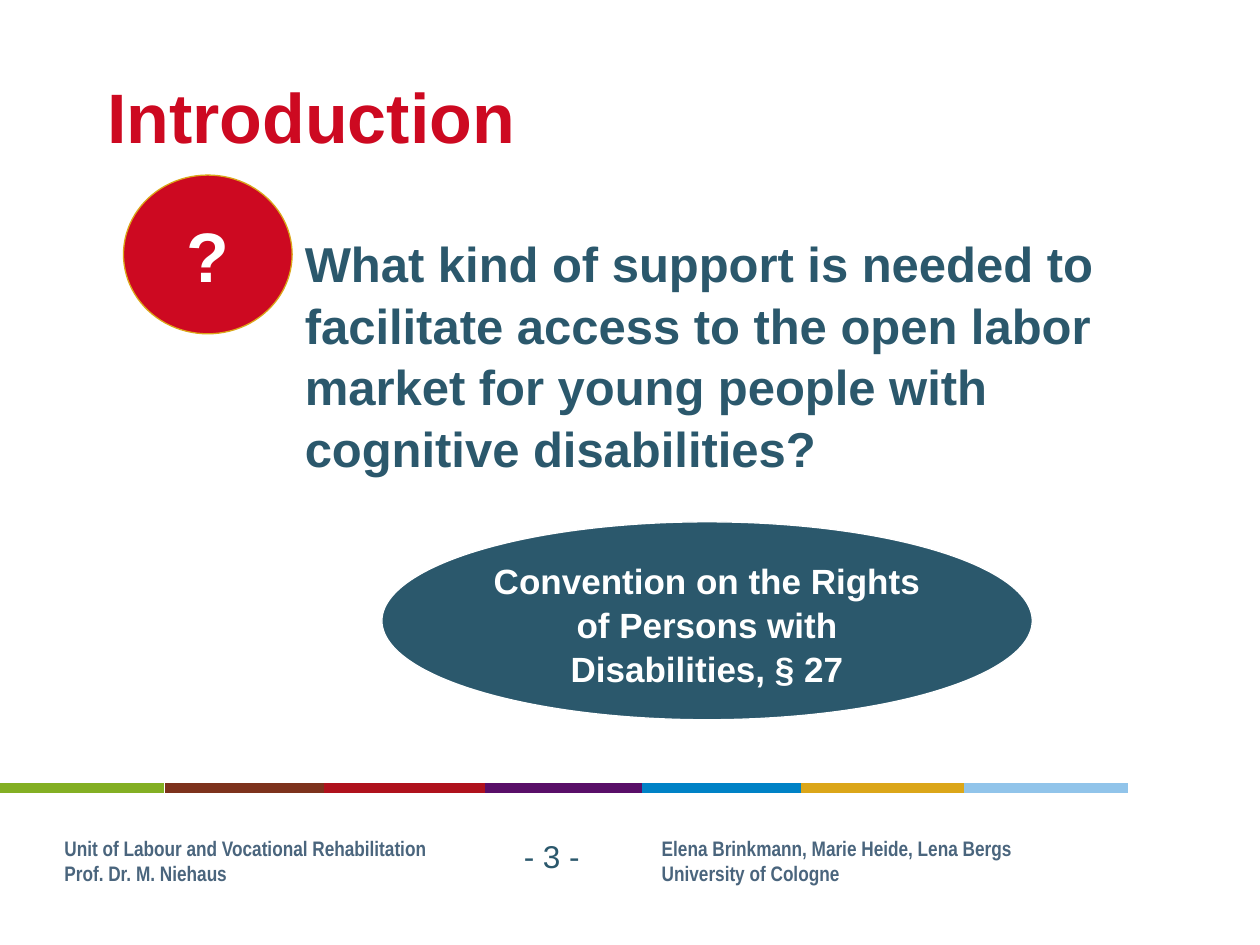
from dataclasses import dataclass, field
from typing import Optional

from lxml import etree
from pptx import Presentation
from pptx import util as u
from pptx.dml.color import RGBColor
from pptx.enum import shapes, text
from pptx.oxml.ns import qn

HUE = {
    "red": "CD0921", "teal": "2B586C", "slate": "4A657D", "white": "FFFFFF",
    "green": "83AF23", "brown": "7D321D", "wine": "AF111D", "plum": "590F68",
    "blue": "0082C6", "gold": "DBA619", "sky": "91C4EA",
}
KIND = shapes.MSO_SHAPE
LEFT, MID = text.PP_ALIGN.LEFT, text.PP_ALIGN.CENTER
TOP, CORE = text.MSO_ANCHOR.TOP, text.MSO_ANCHOR.MIDDLE


@dataclass
class Style:
    size: float
    hue: str
    name: str = "Arial"
    bold: bool = True
    align: int = LEFT
    space: Optional[float] = None
    frame: dict = field(default_factory=dict)


@dataclass
class Block:
    box: tuple
    lines: list
    style: Style
    kind: Optional[int] = None
    fill: str = "white"
    edge: Optional[str] = None


@dataclass
class Band:
    left: float
    hue: str


def tint(key: str) -> RGBColor:
    return RGBColor.from_string(HUE[key])


def place(shape, box: tuple) -> None:
    for key, val in zip(("left", "top", "width", "height"), box):
        setattr(shape, key, u.Cm(val))


def write(shape, lines: list, style: Style) -> None:
    frame = shape.text_frame
    for key, val in {"word_wrap": True, **style.frame}.items():
        setattr(frame, key, val)
    look = {"size": u.Pt(style.size), "name": style.name, "bold": style.bold}
    for num, line in enumerate(lines):
        para = frame.add_paragraph() if num else frame.paragraphs[0]
        para.alignment = style.align
        para.space_before = u.Pt(0)
        if style.space:
            para.line_spacing = style.space
        run = para.add_run()
        run.text = line
        for key, val in look.items():
            setattr(run.font, key, val)
        run.font.color.rgb = tint(style.hue)


def draw_block(slide, block: Block) -> None:
    box = [u.Cm(val) for val in block.box]
    if block.kind is None:
        shape = slide.shapes.add_textbox(*box)
    else:
        shape = slide.shapes.add_shape(block.kind, *box)
        shape.shadow.inherit = False
        shape.fill.solid()
        shape.fill.fore_color.rgb = tint(block.fill)
        if block.edge:
            shape.line.color.rgb = tint(block.edge)
            shape.line.width = u.Pt(0.75)
        else:
            shape.line.fill.background()
    write(shape, block.lines, block.style)


def draw_band(slide, band: Band) -> None:
    line = slide.shapes.add_connector(
        shapes.MSO_CONNECTOR.STRAIGHT,
        u.Cm(band.left), u.Cm(15.88), u.Cm(band.left + 3.3), u.Cm(15.88))
    line.line.color.rgb = tint(band.hue)
    line.line.width = u.Pt(5.5)
    etree.SubElement(line._element.spPr, qn("a:effectLst"))


def drop_bullet(para) -> None:
    props = para._p.get_or_add_pPr()
    props.set("marL", "0")
    props.set("indent", "0")
    etree.SubElement(props, qn("a:buNone"))


HEAD = Style(40, "red", frame={"vertical_anchor": CORE})
ASK = Style(28, "teal", space=1.05, frame={"vertical_anchor": TOP})
MARK = Style(40, "white", align=MID, frame={"vertical_anchor": CORE})
LAW = Style(20, "white", align=MID, space=1.05, frame={"vertical_anchor": TOP})
FOOT = Style(12, "slate", "Arial Narrow", frame={
    "word_wrap": False, "margin_left": 0, "vertical_anchor": TOP})
PAGE = Style(18, "teal", bold=False)

BANDS = [
    Band(0, "green"), Band(3.33, "brown"), Band(6.53, "wine"),
    Band(9.78, "plum"), Band(12.95, "blue"), Band(16.15, "gold"),
    Band(19.43, "sky"),
]
BLOCKS = [
    Block((1.3, 16.71, 4.01, 1.27),
          ["Unit of Labour and Vocational Rehabilitation",
           "Prof. Dr. M. Niehaus"], FOOT, KIND.RECTANGLE),
    Block((10.31, 16.74, 2.79, 1.02), ["- 3 -"], PAGE),
    Block((13.34, 16.71, 4.01, 1.27),
          ["Elena Brinkmann, Marie Heide, Lena Bergs",
           "University of Cologne"], FOOT, KIND.RECTANGLE),
    Block((2.49, 3.53, 3.4, 3.2), ["?"], MARK, KIND.OVAL, "red", "gold"),
    Block((7.7, 10.52, 13.11, 3.99),
          ["Convention on the Rights",
           "of Persons with Disabilities, § 27"],
          LAW, KIND.OVAL, "teal", "white"),
]


def main() -> None:
    deck = Presentation()
    deck.slide_width, deck.slide_height = u.Cm(25.4), u.Cm(19.05)
    slide = deck.slides.add_slide(deck.slide_layouts[1])

    title, body = slide.placeholders
    place(title, (1.91, 0.74, 21.59, 3.18))
    write(title, ["Introduction"], HEAD)
    place(body, (5.89, 4.52, 17.6, 11))
    write(body, ["What kind of support is needed to facilitate access to the "
                 "open labor market for young people with cognitive "
                 "disabilities?"], ASK)
    drop_bullet(body.text_frame.paragraphs[0])

    for band in BANDS:
        draw_band(slide, band)
    for block in BLOCKS:
        draw_block(slide, block)
    deck.save("out.pptx")


if __name__ == "__main__":
    main()
